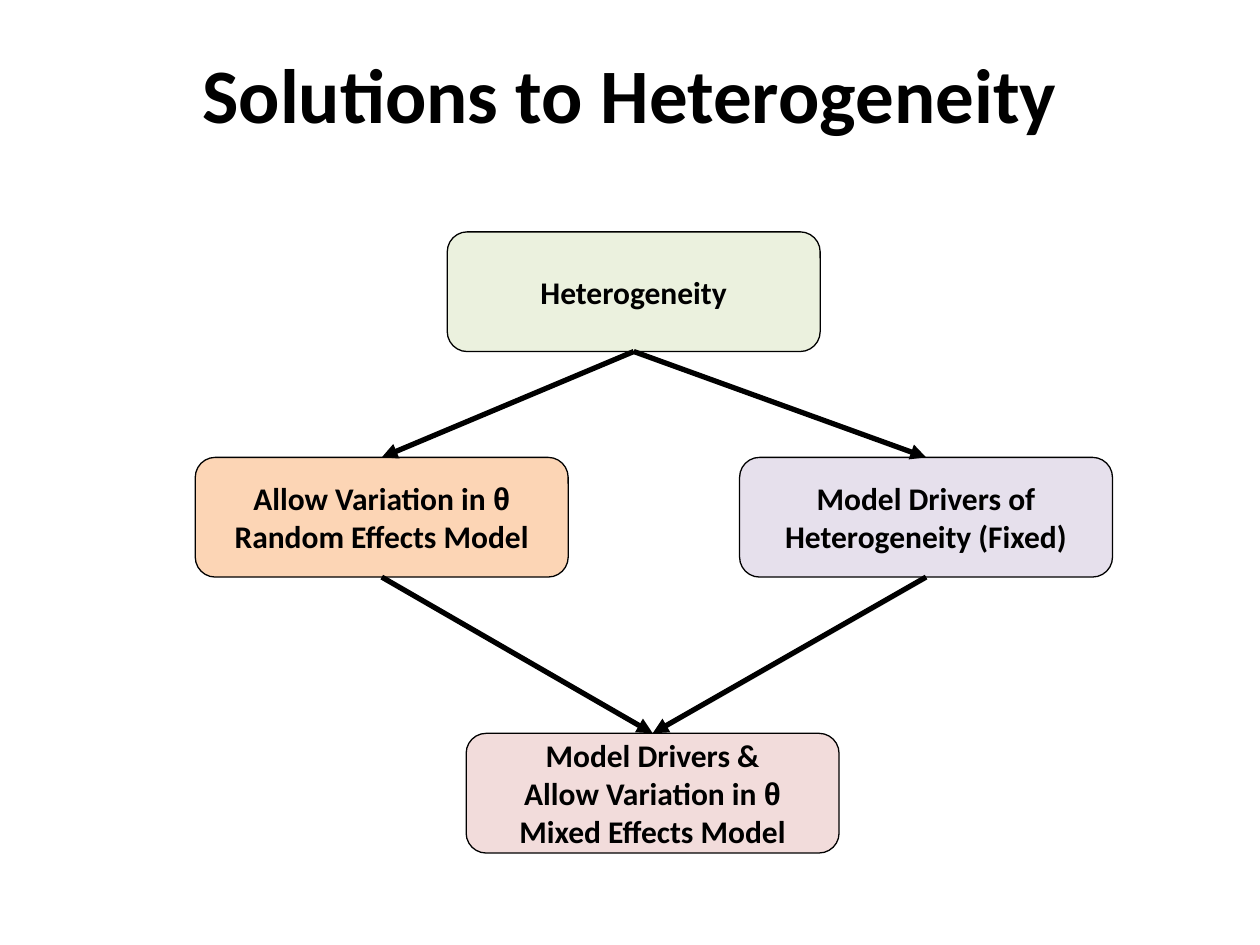
import pptx
import pptx.util
import pptx.dml.color
import pptx.enum.shapes
import pptx.enum.text
import pptx.oxml
import pptx.oxml.ns
from pptx.util import Inches

BOX_WIDTH, BOX_HEIGHT = 2.96, 0.95
TOP, BOTTOM = 0, 2
BLACK = "000000"


def paint(color_format, color):
    color_format.rgb = pptx.dml.color.RGBColor.from_string(color)


def style_paragraph(paragraph, size):
    paragraph.alignment = pptx.enum.text.PP_ALIGN.CENTER
    paragraph.font.size = pptx.util.Pt(size)
    paragraph.font.bold = True
    paint(paragraph.font.color, BLACK)


def add_title(slide, wording):
    title = slide.shapes.title
    title.left, title.top = Inches(0), Inches(0.11)
    title.width, title.height = Inches(10), Inches(1.25)
    title.text_frame.text = wording
    title.text_frame.vertical_anchor = pptx.enum.text.MSO_ANCHOR.MIDDLE
    heading = title.text_frame.paragraphs[0]
    style_paragraph(heading, 44)
    heading.font.name = "Calibri"


def add_line_of_text(paragraph, wording):
    style_paragraph(paragraph, 18)
    before, theta, after = wording.partition("θ")
    if not theta:
        paragraph.font.name = "Calibri"
    for part, font_name in ((before, "Calibri"), (theta, "Arial"), (after, "Calibri")):
        if part:
            run = paragraph.add_run()
            run.text = part
            if theta:
                run.font.name = font_name


def add_step(slide, left, top, fill, lines):
    step = slide.shapes.add_shape(
        pptx.enum.shapes.MSO_SHAPE.ROUNDED_RECTANGLE,
        Inches(left), Inches(top), Inches(BOX_WIDTH), Inches(BOX_HEIGHT))
    step.shadow.inherit = False
    step.fill.solid()
    paint(step.fill.fore_color, fill)
    paint(step.line.color, BLACK)
    step.line.width = pptx.util.Pt(0.75)
    frame = step.text_frame
    frame.word_wrap = True
    frame.vertical_anchor = pptx.enum.text.MSO_ANCHOR.MIDDLE
    for index, wording in enumerate(lines):
        paragraph = frame.add_paragraph() if index else frame.paragraphs[0]
        add_line_of_text(paragraph, wording)
    return step


def add_arrow(slide, source, target):
    arrow = slide.shapes.add_connector(
        pptx.enum.shapes.MSO_CONNECTOR.STRAIGHT, 0, 0, 0, 0)
    arrow.begin_connect(source, BOTTOM)
    arrow.end_connect(target, TOP)
    paint(arrow.line.color, BLACK)
    arrow.line.width = pptx.util.Pt(3)
    namespace = pptx.oxml.ns.nsdecls("a")
    arrow.line._get_or_add_ln().append(
        pptx.oxml.parse_xml(f'<a:tailEnd {namespace} type="triangle"/>'))
    arrow._element.spPr.append(pptx.oxml.parse_xml(f"<a:effectLst {namespace}/>"))


def main():
    presentation = pptx.Presentation()
    presentation.slide_width = Inches(10)
    presentation.slide_height = Inches(7.5)
    slide = presentation.slides.add_slide(presentation.slide_layouts[5])

    add_title(slide, "Solutions to Heterogeneity")
    heterogeneity = add_step(slide, 3.55, 1.84, "EBF1DE", ["Heterogeneity"])
    random_effects = add_step(
        slide, 1.55, 3.63, "FCD5B5", ["Allow Variation in θ", "Random Effects Model"])
    fixed_effects = add_step(
        slide, 5.87, 3.63, "E6E0EC", ["Model Drivers of Heterogeneity (Fixed)"])
    mixed_effects = add_step(
        slide, 3.7, 5.82, "F2DCDB",
        ["Model Drivers &", "Allow Variation in θ", "Mixed Effects Model"])

    for model in (random_effects, fixed_effects):
        add_arrow(slide, heterogeneity, model)
        add_arrow(slide, model, mixed_effects)

    presentation.save("out.pptx")


if __name__ == "__main__":
    main()
